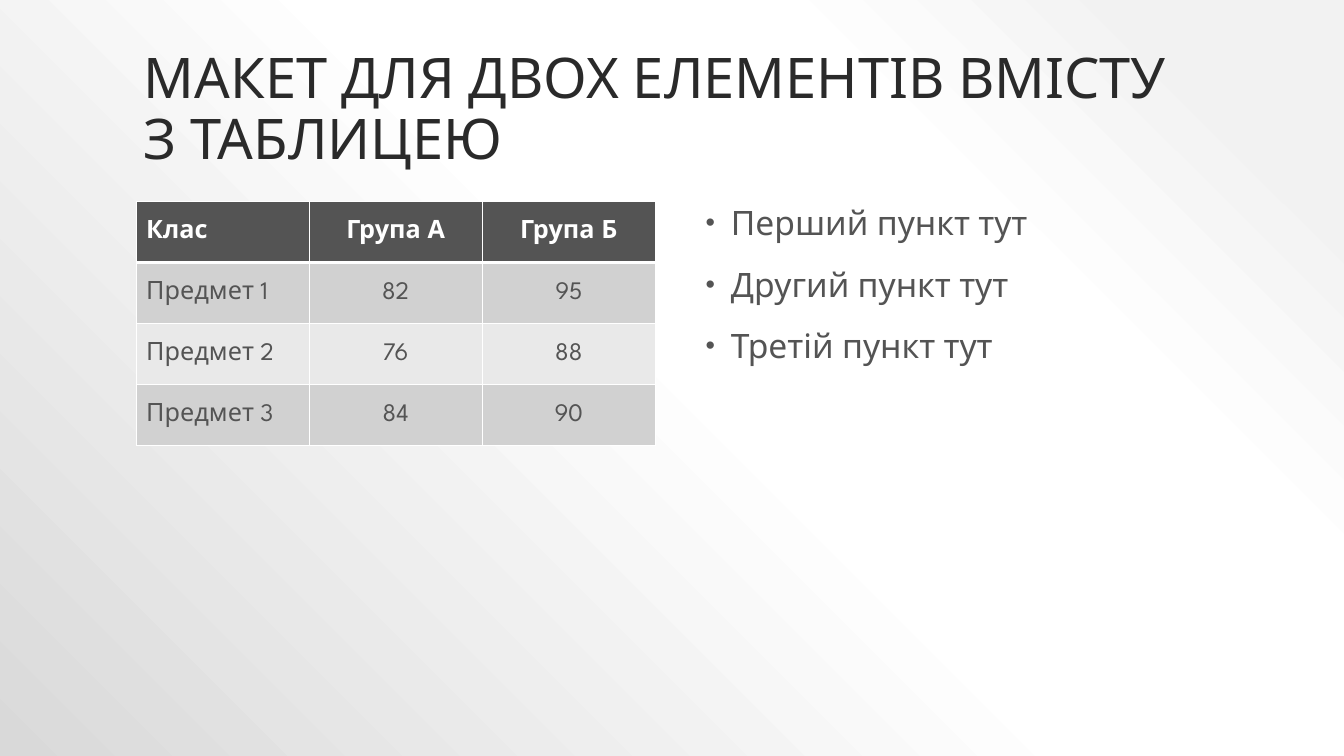
from lxml.etree import SubElement
from pptx import Presentation
from pptx.dml.color import RGBColor
from pptx.enum.text import MSO_ANCHOR as ANCHOR, PP_ALIGN as ALIGN
from pptx.oxml.ns import qn
from pptx.util import Inches, Pt

FONT = "League Spartan"
COLORS = {
    "title": "2A2A2A",
    "text": "545454",
    "header": "545454",
    "odd": "D1D1D1",
    "even": "E9E9E9",
    "white": "FFFFFF",
}
GRADIENT = [(10, "F2F2F2"), (28, "FFFFFF"), (48, "FFFFFF"), (100, "D9D9D9")]
TITLE = "МАКЕТ ДЛЯ ДВОХ ЕЛЕМЕНТІВ ВМІСТУ З ТАБЛИЦЕЮ"
GRADES = [
    ("Клас", "Група А", "Група Б"),
    ("Предмет 1", "82", "95"),
    ("Предмет 2", "76", "88"),
    ("Предмет 3", "84", "90"),
]
POINTS = ["Перший пункт тут", "Другий пункт тут", "Третій пункт тут"]


def add_element(parent, tag, **attrs):
    """Append a DrawingML element with the given attributes."""
    return SubElement(parent, qn(f"a:{tag}"), {k: str(v) for k, v in attrs.items()})


def write(p, text, size, color, bold=False, align=ALIGN.LEFT, spacing=None, before=None):
    """Put one formatted run into a paragraph."""
    p.alignment, p.line_spacing = align, spacing
    if before is not None:
        p.space_before = Pt(before)
    r = p.add_run()
    r.text = text
    r.font.name, r.font.size, r.font.bold = FONT, Pt(size), bold
    r.font.color.rgb = RGBColor.from_string(COLORS[color])


def add_frame(slide, box, anchor):
    """Add a wrapping text box and return its text frame."""
    tf = slide.shapes.add_textbox(*map(Inches, box)).text_frame
    tf.word_wrap, tf.vertical_anchor = True, anchor
    return tf


def paint_background(slide):
    """Fill the background with a gradient spreading from the top right corner."""
    fill = slide.background.fill
    fill.gradient()
    grad = slide.element.find(".//" + qn("a:gradFill"))
    for child in list(grad):
        grad.remove(child)
    stops = add_element(grad, "gsLst")
    for pos, color in GRADIENT:
        add_element(add_element(stops, "gs", pos=pos * 1000), "srgbClr", val=color)
    circle = add_element(grad, "path", path="circle")
    add_element(circle, "fillToRect", l=100000, b=100000)


def add_title(slide, box):
    """Place the slide title at the bottom of its box."""
    tf = add_frame(slide, box, ANCHOR.BOTTOM)
    write(tf.paragraphs[0], TITLE, 40, "title", spacing=0.9)


def set_borders(cell, bottom):
    """Draw white cell borders, the lower one with its own width."""
    props = cell._tc.get_or_add_tcPr()
    widths = {"lnL": 1, "lnR": 1, "lnT": 1, "lnB": bottom}
    for i, (tag, width) in enumerate(widths.items()):
        ln = add_element(props, tag, w=Pt(width))
        add_element(add_element(ln, "solidFill"), "srgbClr", val=COLORS["white"])
        props.insert(i, ln)


def add_grades(slide, box):
    """Place the grade table with a dark header and banded rows."""
    shape = slide.shapes.add_table(len(GRADES), len(GRADES[0]), *map(Inches, box))
    for i, row in enumerate(GRADES):
        header = i == 0
        fill = "header" if header else "odd" if i % 2 else "even"
        for j, text in enumerate(row):
            cell = shape.table.cell(i, j)
            cell.vertical_anchor = ANCHOR.MIDDLE
            cell.fill.solid()
            cell.fill.fore_color.rgb = RGBColor.from_string(COLORS[fill])
            set_borders(cell, 3 if header else 1)
            write(cell.text_frame.paragraphs[0], text, 18,
                  "white" if header else "text", bold=header,
                  align=ALIGN.CENTER if j else ALIGN.LEFT)


def add_points(slide, box):
    """Place the bulleted list."""
    tf = add_frame(slide, box, ANCHOR.TOP)
    for i, text in enumerate(POINTS):
        p = tf.add_paragraph() if i else tf.paragraphs[0]
        write(p, text, 24, "text", spacing=0.9, before=18)
        props = p._p.get_or_add_pPr()
        props.set("marL", str(Inches(0.3)))
        props.set("indent", str(Inches(-0.25)))
        add_element(add_element(props, "buClr"), "srgbClr", val=COLORS["text"])
        add_element(props, "buSzPct", val=80000)
        add_element(props, "buFont", typeface="Arial")
        add_element(props, "buChar", char="•")


def main():
    """Build and save the slide."""
    prs = Presentation()
    prs.slide_width, prs.slide_height = Inches(13.33), Inches(7.5)
    slide = prs.slides.add_slide(prs.slide_layouts[6])
    paint_background(slide)
    add_title(slide, (1.33, 0.3, 10.67, 1.45))
    add_grades(slide, (1.35, 2, 5.15, 2.42))
    add_points(slide, (6.85, 2, 5.15, 4.75))
    prs.save("out.pptx")


if __name__ == "__main__":
    main()
